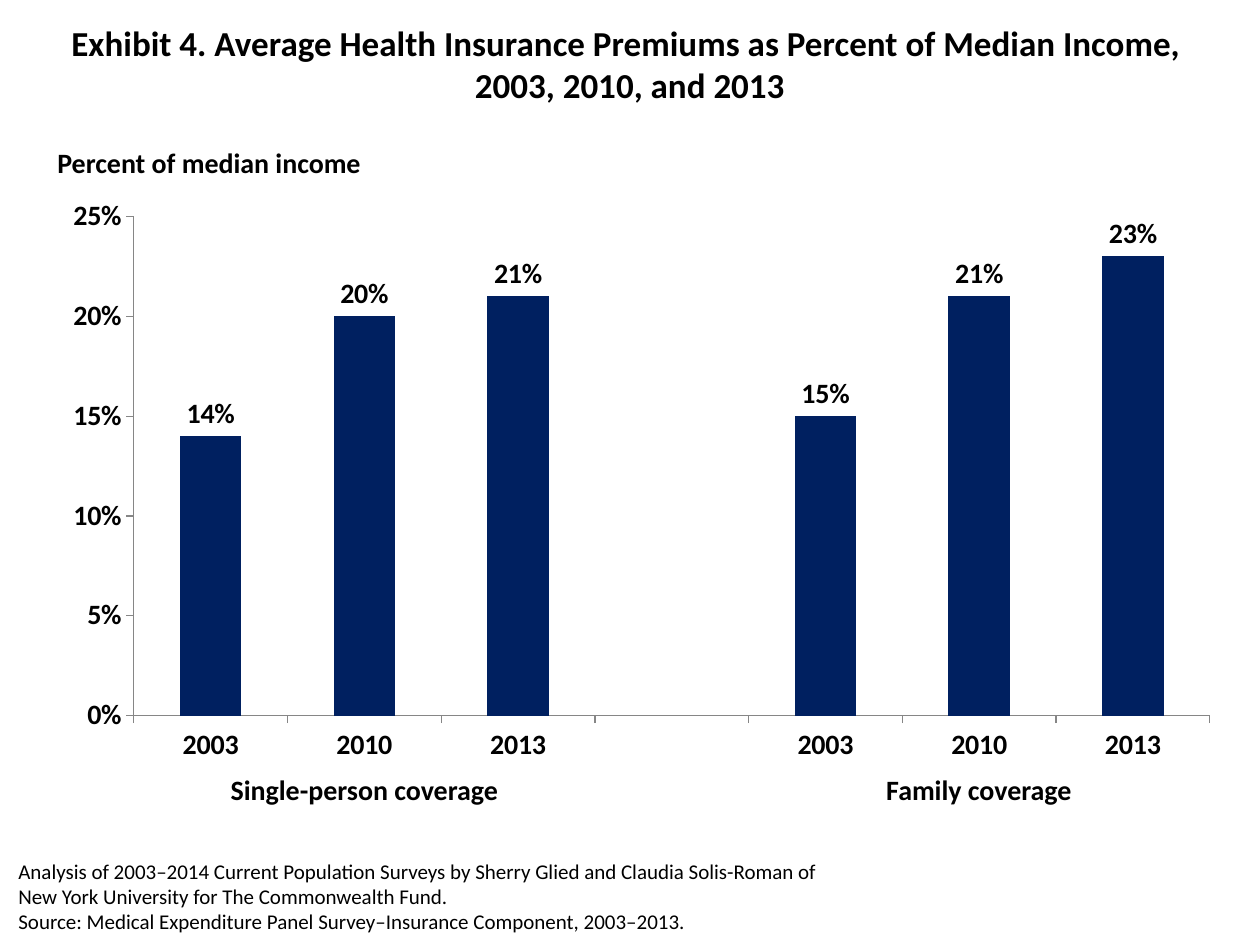
import pptx
import pptx.chart.data
import pptx.dml.color
import pptx.enum.chart
import pptx.enum.text
import pptx.oxml
import pptx.oxml.ns
import pptx.util

PX_PER_INCH = 126
FONT = "Calibri"
BLACK, NAVY, GREY = "000000", "002060", "868686"
LEFT = pptx.enum.text.PP_ALIGN.LEFT
CENTER = pptx.enum.text.PP_ALIGN.CENTER
YEARS = ["2003", "2010", "2013"]
SINGLE_PREMIUMS = [0.14, 0.20, 0.21]
FAMILY_PREMIUMS = [0.15, 0.21, 0.23]
PLOT_AREA = {"x": 0.085, "y": 0.152, "w": 0.899, "h": 0.754}


def px(length):
    """Turn pixels into EMU."""
    return pptx.util.Emu(round(length * 914400 / PX_PER_INCH))


def color(value):
    """Turn a hex string into a colour."""
    return pptx.dml.color.RGBColor.from_string(value)


def set_font(font, size, bold):
    """Apply the slide's typeface in black."""
    font.name = FONT
    font.size = pptx.util.Pt(size)
    font.bold = bold
    font.color.rgb = color(BLACK)


def write_text(shape, lines, size, bold, alignment):
    """Fill a shape with one paragraph per line."""
    frame = shape.text_frame
    frame.word_wrap = True
    frame.auto_size = pptx.enum.text.MSO_AUTO_SIZE.NONE
    frame.text = "\n".join(lines)
    for paragraph in frame.paragraphs:
        paragraph.alignment = alignment
        set_font(paragraph.font, size, bold)


def add_title(slide, text):
    """Place and format the title placeholder."""
    title = slide.shapes.title
    title.left, title.top, title.width, title.height = px(0), px(13), px(1260), px(101)
    write_text(title, [text], 20, True, CENTER)
    title.text_frame.vertical_anchor = pptx.enum.text.MSO_ANCHOR.MIDDLE


def add_text(slide, box, lines, size=16, bold=True, alignment=CENTER):
    """Add a text box at left, top, width, height."""
    shape = slide.shapes.add_textbox(*map(px, box))
    write_text(shape, lines, size, bold, alignment)


def format_axis(axis):
    """Give an axis its labels, outer ticks and grey line."""
    axis.has_major_gridlines = False
    axis.major_tick_mark = pptx.enum.chart.XL_TICK_MARK.OUTSIDE
    axis.minor_tick_mark = pptx.enum.chart.XL_TICK_MARK.NONE
    axis.format.line.color.rgb = color(GREY)
    axis.format.line.width = pptx.util.Pt(0.75)
    set_font(axis.tick_labels.font, 16, True)


def set_plot_area(chart, fractions):
    """Fix the inner plot area as fractions of the chart."""
    plot_area = chart._chartSpace.chart.plotArea
    for layout in plot_area.findall(pptx.oxml.ns.qn("c:layout")):
        plot_area.remove(layout)
    modes = "".join(f'<c:{side}Mode val="edge"/>' for side in "xy")
    sizes = "".join(f'<c:{side} val="{value}"/>' for side, value in fractions.items())
    plot_area.insert(0, pptx.oxml.parse_xml(
        f'<c:layout {pptx.oxml.ns.nsdecls("c")}><c:manualLayout>'
        f'<c:layoutTarget val="inner"/>{modes}{sizes}</c:manualLayout></c:layout>'))


def add_premium_chart(slide, box):
    """Add the column chart of premiums by coverage and year."""
    data = pptx.chart.data.CategoryChartData(number_format="0%")
    data.categories = YEARS + [""] + YEARS
    data.add_series("Series 1", SINGLE_PREMIUMS + [None] + FAMILY_PREMIUMS)
    chart = slide.shapes.add_chart(
        pptx.enum.chart.XL_CHART_TYPE.COLUMN_CLUSTERED, *map(px, box), data).chart
    chart.has_legend = False
    chart.has_title = False
    set_font(chart.font, 18, False)
    set_plot_area(chart, PLOT_AREA)

    format_axis(chart.category_axis)
    value_axis = chart.value_axis
    format_axis(value_axis)
    value_axis.minimum_scale, value_axis.maximum_scale = 0, 0.25
    value_axis.major_unit = 0.05
    value_axis.tick_labels.number_format = "0%"
    value_axis.tick_labels.number_format_is_linked = False

    plot = chart.plots[0]
    plot.gap_width = 150
    plot.vary_by_categories = False
    series = plot.series[0]
    series.format.fill.solid()
    series.format.fill.fore_color.rgb = color(NAVY)
    labels = series.data_labels
    labels.show_value = True
    labels.position = pptx.enum.chart.XL_LABEL_POSITION.OUTSIDE_END
    set_font(labels.font, 16, True)


def main():
    """Build and save the slide."""
    presentation = pptx.Presentation()
    presentation.slide_width, presentation.slide_height = px(1260), px(945)
    slide = presentation.slides.add_slide(presentation.slide_layouts.get_by_name("Title Only"))
    add_title(slide, "Exhibit 4. Average Health Insurance Premiums as Percent of "
                     "Median Income, \v2003, 2010, and 2013")
    add_premium_chart(slide, (32, 116, 1197, 662))
    add_text(slide, (131, 766, 467, 47), ["Single-person coverage"])
    add_text(slide, (751, 766, 456, 47), ["Family coverage"])
    add_text(slide, (6, 852, 834, 89), [
        "Analysis of 2003–2014 Current Population Surveys by Sherry Glied and "
        "Claudia Solis-Roman of New York University for The Commonwealth Fund.",
        "Source: Medical Expenditure Panel Survey–Insurance Component, 2003–2013.",
    ], 12, False, LEFT)
    add_text(slide, (45, 139, 388, 47), ["Percent of median income"], alignment=LEFT)
    presentation.save("out.pptx")


if __name__ == "__main__":
    main()
